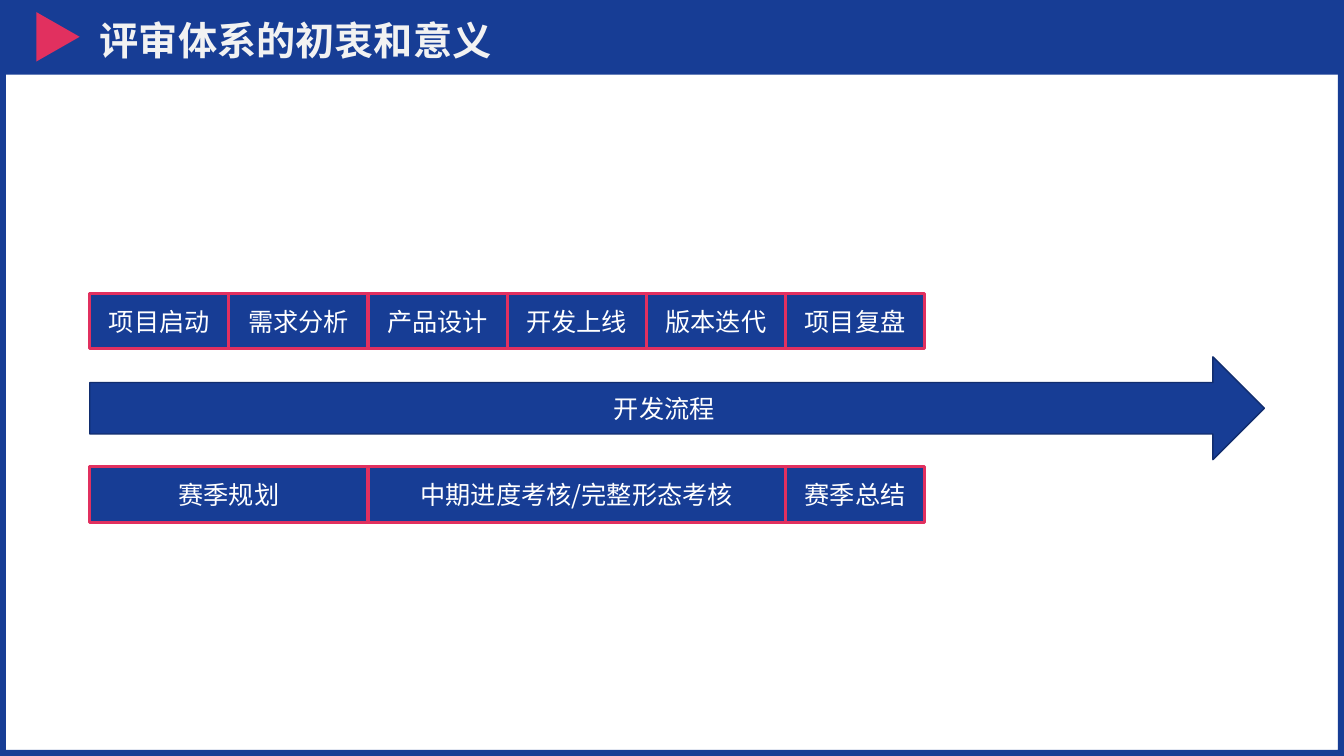
from dataclasses import dataclass
from typing import Optional

from lxml import etree
from pptx import Presentation
from pptx import util as u
from pptx.dml.color import RGBColor
from pptx.enum import shapes, text
from pptx.oxml import ns

NAVY = RGBColor(0x17, 0x3D, 0x95)
DARK_NAVY = RGBColor(0x11, 0x2D, 0x6E)
CRIMSON = RGBColor(0xE1, 0x30, 0x5F)
WHITE = RGBColor(0xFF, 0xFF, 0xFF)
OFF_WHITE = RGBColor(0xF2, 0xF2, 0xF2)
FONT = "Noto Sans CJK SC"

SLIDE_WIDTH, SLIDE_HEIGHT = 13.33, 7.5
HEADER_HEIGHT = 0.74
LEFT = 0.89
STAGE_WIDTH, STAGE_HEIGHT = 1.38, 0.55


@dataclass(frozen=True)
class Block:
    kind: shapes.MSO_SHAPE
    left: float
    top: float
    width: float
    height: float
    fill: RGBColor = NAVY
    line: Optional[RGBColor] = None
    line_width: float = 1
    label: str = ""
    adjustment: Optional[float] = None
    rotation: float = 0


@dataclass(frozen=True)
class Stage:
    label: str
    span: int = 1


@dataclass(frozen=True)
class Track:
    top: float
    stages: tuple[Stage, ...]


DECORATIONS = (
    Block(shapes.MSO_SHAPE.FRAME, 0, 0, SLIDE_WIDTH, SLIDE_HEIGHT, adjustment=0.008),
    Block(shapes.MSO_SHAPE.RECTANGLE, 0, 0, SLIDE_WIDTH, HEADER_HEIGHT),
    Block(shapes.MSO_SHAPE.ISOSCELES_TRIANGLE, 0.33, 0.15, 0.49, 0.43,
          fill=CRIMSON, rotation=90),
)
PROCESS_ARROW = Block(shapes.MSO_SHAPE.RIGHT_ARROW, LEFT, 3.54, 11.65, 1.02,
                      line=DARK_NAVY, label="开发流程")
TRACKS = (
    Track(2.91, (Stage("项目启动"), Stage("需求分析"), Stage("产品设计"),
                 Stage("开发上线"), Stage("版本迭代"), Stage("项目复盘"))),
    Track(4.63, (Stage("赛季规划", 2), Stage("中期进度考核/完整形态考核", 3),
                 Stage("赛季总结"))),
)


def write_text(frame, wording: str, *, size: float = 18, color: RGBColor = WHITE,
               bold: bool = False, align=text.PP_ALIGN.CENTER,
               line_spacing: float = 1.0) -> None:
    frame.word_wrap = True
    frame.auto_size = text.MSO_AUTO_SIZE.NONE
    frame.vertical_anchor = text.MSO_ANCHOR.MIDDLE
    paragraph = frame.paragraphs[0]
    paragraph.alignment = align
    paragraph.line_spacing = line_spacing
    paragraph.space_before = u.Pt(0)
    run = paragraph.add_run()
    run.text = wording
    run.font.size = u.Pt(size)
    run.font.bold = bold
    run.font.color.rgb = color
    run.font.name = FONT
    east_asian = etree.SubElement(run.font._element, ns.qn("a:ea"))
    east_asian.set("typeface", FONT)


def draw_block(slide, block: Block) -> None:
    shape = slide.shapes.add_shape(
        block.kind, u.Inches(block.left), u.Inches(block.top),
        u.Inches(block.width), u.Inches(block.height))
    shape.shadow.inherit = False
    shape.rotation = block.rotation
    if block.adjustment is not None:
        shape.adjustments[0] = block.adjustment
    shape.fill.solid()
    shape.fill.fore_color.rgb = block.fill
    if block.line is None:
        shape.line.fill.background()
    else:
        shape.line.color.rgb = block.line
        shape.line.width = u.Pt(block.line_width)
    if block.label:
        write_text(shape.text_frame, block.label)


def draw_track(slide, track: Track) -> None:
    left = LEFT
    for stage in track.stages:
        width = stage.span * STAGE_WIDTH
        draw_block(slide, Block(
            shapes.MSO_SHAPE.ROUNDED_RECTANGLE, left, track.top, width, STAGE_HEIGHT,
            line=CRIMSON, line_width=2.25, label=stage.label, adjustment=0))
        left += width


def place_title(slide, wording: str) -> None:
    title = slide.shapes.title
    title.left, title.top = u.Inches(LEFT), u.Inches(-0.09)
    title.width, title.height = u.Inches(11.98), u.Inches(HEADER_HEIGHT)
    write_text(title.text_frame, wording, size=28, color=OFF_WHITE, bold=True,
               align=text.PP_ALIGN.LEFT, line_spacing=1.5)
    slide.shapes._spTree.append(title._element)


def main() -> None:
    deck = Presentation()
    deck.slide_width = u.Inches(SLIDE_WIDTH)
    deck.slide_height = u.Inches(SLIDE_HEIGHT)
    slide = deck.slides.add_slide(deck.slide_layouts.get_by_name("Title Only"))
    for decoration in DECORATIONS:
        draw_block(slide, decoration)
    place_title(slide, "评审体系的初衷和意义")
    draw_block(slide, PROCESS_ARROW)
    for track in TRACKS:
        draw_track(slide, track)
    deck.save("out.pptx")


if __name__ == "__main__":
    main()
